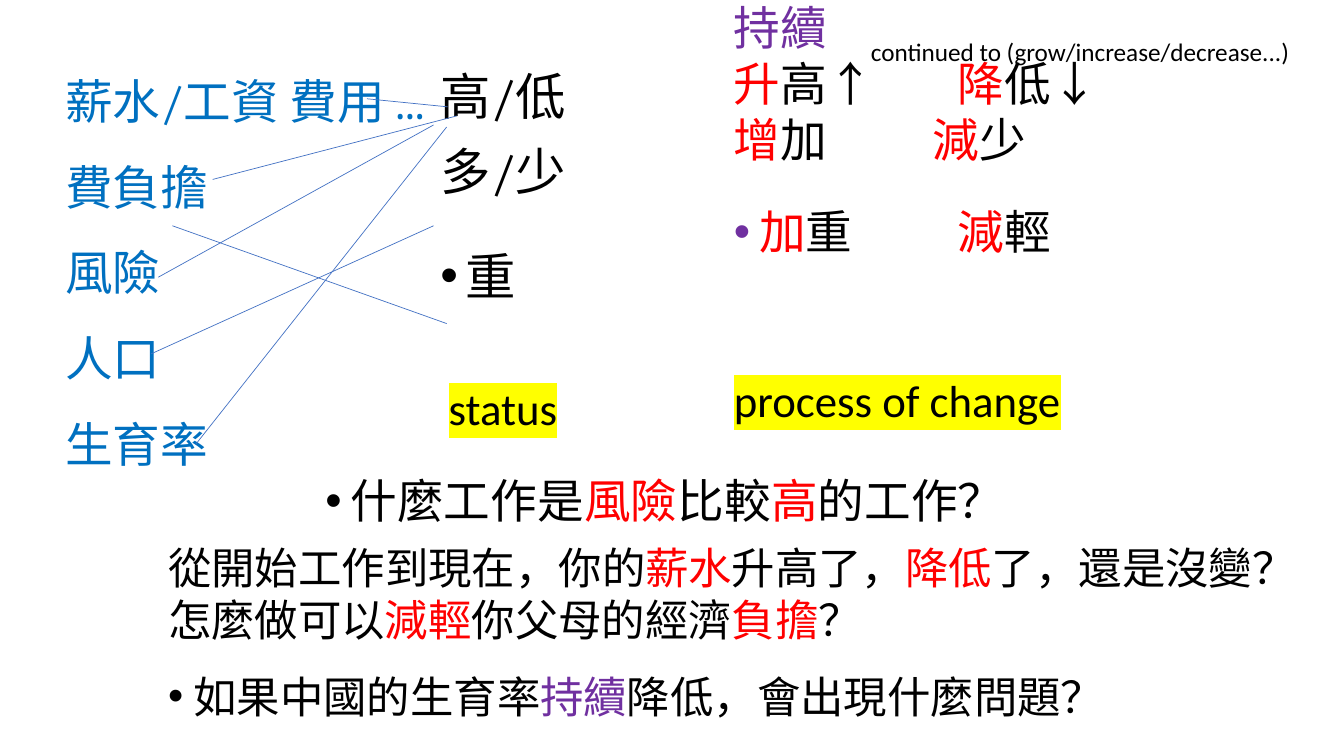
from lxml import etree
from pptx import Presentation
from pptx.dml.color import RGBColor
from pptx.enum.shapes import MSO_CONNECTOR
from pptx.enum.text import MSO_ANCHOR
from pptx.oxml.ns import qn
from pptx.util import Inches, Pt

STRAIGHT = MSO_CONNECTOR.STRAIGHT
TOP, MIDDLE = MSO_ANCHOR.TOP, MSO_ANCHOR.MIDDLE
BLACK, RED, PURPLE, BLUE = "000000", "FF0000", "7030A0", "0070C0"
YELLOW, LINE_BLUE = "FFFF00", "4472C4"


def color(value):
    return RGBColor.from_string(value)


def add_element(parent, tag, **attributes):
    return etree.SubElement(parent, qn(tag), attributes)


class SlideBuilder:
    """Holds the style and the current slide."""

    heading_font, label_font = "Cambria", "Calibri"
    bullet_indent = 0.25

    def __init__(self, presentation):
        self.slide = presentation.slides.add_slide(presentation.slide_layouts[6])

    def text(self, box, paragraphs, size, font=heading_font, anchor=TOP, wrap=True, highlight=None):
        """Each paragraph is (runs, format values); each run is (words, color)."""
        frame = self.slide.shapes.add_textbox(*map(Inches, box)).text_frame
        frame.word_wrap, frame.vertical_anchor = wrap, anchor
        for index, (runs, values) in enumerate(paragraphs):
            paragraph = frame.add_paragraph() if index else frame.paragraphs[0]
            values = dict(values)
            bullet, tab = values.pop("bullet", None), values.pop("tab", None)
            for name, value in values.items():
                setattr(paragraph, name, value)
            if bullet:
                self.bullet(paragraph, bullet)
            if tab:
                tabs = add_element(paragraph._p.get_or_add_pPr(), "a:tabLst")
                add_element(tabs, "a:tab", pos=str(Inches(tab)), algn="l")
            for words, run_color in runs:
                run = paragraph.add_run()
                run.text = words
                for name, value in {"size": Pt(size), "name": font}.items():
                    setattr(run.font, name, value)
                run.font.color.rgb = color(run_color)
                if highlight:
                    mark = etree.Element(qn("a:highlight"))
                    add_element(mark, "a:srgbClr", val=highlight)
                    run._r.rPr.find(qn("a:solidFill")).addnext(mark)

    def bullet(self, paragraph, bullet_color):
        properties = paragraph._p.get_or_add_pPr()
        properties.set("marL", str(Inches(self.bullet_indent)))
        properties.set("indent", str(-Inches(self.bullet_indent)))
        add_element(add_element(properties, "a:buClr"), "a:srgbClr", val=bullet_color)
        add_element(properties, "a:buFont", typeface="Arial")
        add_element(properties, "a:buChar", char="•")

    def label(self, box, words, size, highlight=None):
        self.text(box, [([(words, BLACK)], {})], size, self.label_font, wrap=False, highlight=highlight)

    def line(self, start, end):
        line = self.slide.shapes.add_connector(STRAIGHT, *map(Inches, start + end))
        line.line.color.rgb = color(LINE_BLUE)
        line.line.width = Pt(0.5)
        add_element(line._element.spPr, "a:effectLst")


def bulleted(spacing, bullet_color=BLACK):
    return {"line_spacing": spacing, "space_before": Pt(10), "bullet": bullet_color}


def main():
    presentation = Presentation()
    presentation.slide_width, presentation.slide_height = Inches(13.33), Inches(7.5)
    builder = SlideBuilder(presentation)

    # Topics
    topics = ["薪水/工資 費用 ... 費負擔", "風險", "人口", "生育率"]
    builder.text((0.55, 0.6, 3.75, 3.91),
                 [([(topic, BLUE)], {"line_spacing": 1.5}) for topic in topics], 34, anchor=MIDDLE)

    # Status words
    pair_format = {"line_spacing": 1.0, "space_before": Pt(10)}
    builder.text((4.27, 0.6, 4.05, 3.12), [
        ([("高/低", BLACK)], pair_format),
        ([("多/少", BLACK)], pair_format),
        ([("重", BLACK)], bulleted(1.5)),
    ], 36)

    # Lines from topics to status words
    for start, end in [
        ((3.64, 0.98), (4.44, 1.06)),
        ((1.57, 2.75), (4.3, 1.24)),
        ((2.11, 1.78), (4.53, 1.15)),
        ((1.71, 2.24), (4.43, 3.21)),
        ((1.5, 3.51), (4.3, 2.24)),
        ((1.94, 4.41), (4.43, 1.26)),
    ]:
        builder.line(start, end)

    # Words for change: rising on the left, falling at the tab
    changes = [
        ("升", "高↑", "降", "低↓", {"tab": 2.22}),
        ("增", "加", "減", "少", {"tab": 1.97}),
        ("加", "重", "減", "輕", {"tab": 2.22, **bulleted(1.4, PURPLE)}),
    ]
    builder.text((7.18, -0.06, 4.75, 3.57), [([("持續", PURPLE)], {})] + [
        ([(up, RED), (up_end + "\t", BLACK), (down, RED), (down_end, BLACK)], values)
        for up, up_end, down, down_end, values in changes
    ], 33.3)

    # Labels
    builder.label((4.35, 3.73, 1.29, 0.64), "status", 32, YELLOW)
    builder.label((7.18, 3.65, 3.47, 0.64), "process of change", 32, YELLOW)
    builder.label((8.54, 0.31, 4.4, 0.4), "continued to (grow/increase/decrease...)", 18)

    # Questions
    builder.text((1.57, 5.32, 11.5, 2.23), [
        ([("從開始工作到現在，你的", BLACK), ("薪水", RED), ("升高了，", BLACK),
          ("降低", RED), ("了，還是沒變？", BLACK)], {}),
        ([("怎麼做可以", BLACK), ("減輕", RED), ("你父母的經濟", BLACK),
          ("負擔", RED), ("？", BLACK)], {}),
        ([("如果中國的生育率", BLACK), ("持續", PURPLE),
          ("降低，會出現什麼問題？", BLACK)], bulleted(1.2)),
    ], 31)
    builder.text((3.13, 4.58, 8.8, 0.71), [
        ([("什麼工作是", BLACK), ("風險", RED), ("比較", BLACK), ("高", RED),
          ("的工作？", BLACK)], bulleted(1.1)),
    ], 33.3)

    presentation.save("out.pptx")


if __name__ == "__main__":
    main()
